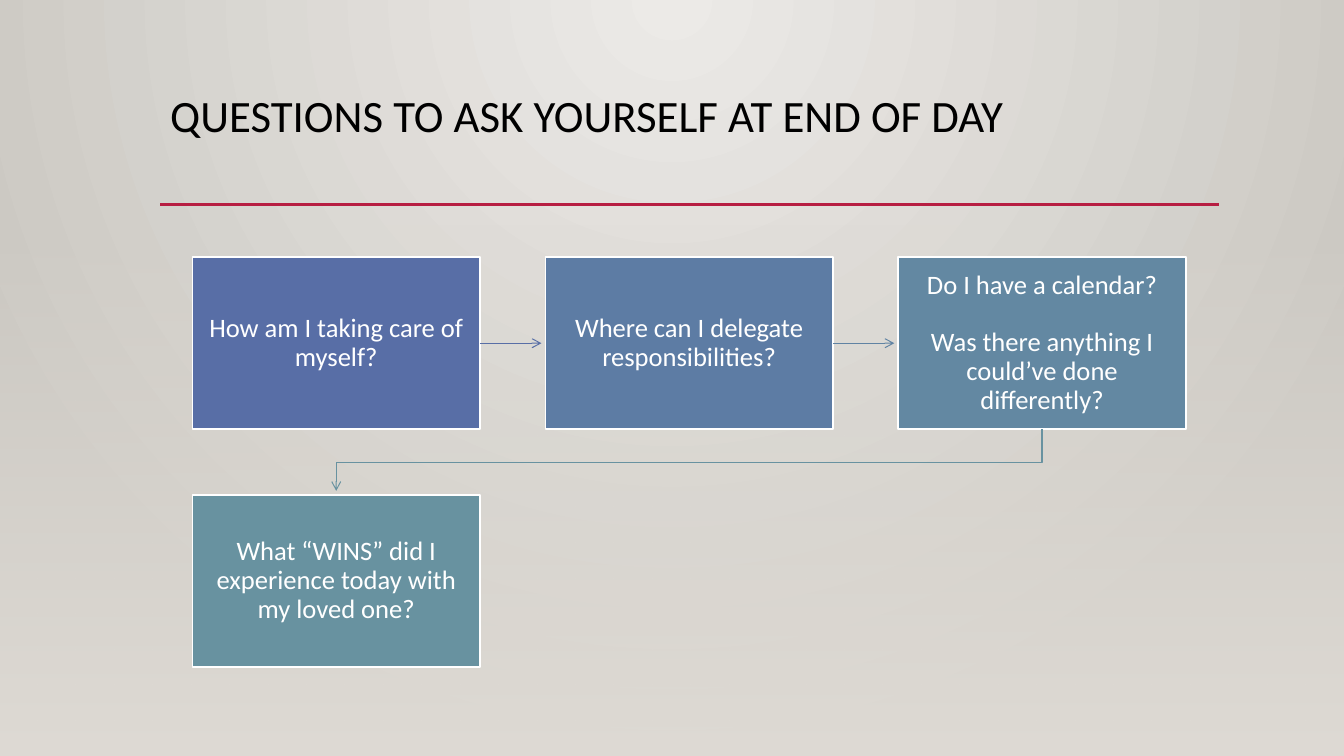
import lxml.etree
import pptx
import pptx.util
import pptx.dml.color
import pptx.enum.shapes
import pptx.enum.text
import pptx.oxml.ns
from dataclasses import dataclass

Inches, Pt = pptx.util.Inches, pptx.util.Pt
qn = pptx.oxml.ns.qn
RGB = pptx.dml.color.RGBColor.from_string
Align = pptx.enum.text.PP_ALIGN
Anchor = pptx.enum.text.MSO_ANCHOR


@dataclass(frozen=True)
class Theme:
    font: str = "Calibri"
    head: int = 32
    body: int = 19
    ink: str = "000000"
    white: str = "FFFFFF"
    rule: str = "B71E42"
    glow: tuple = ("ECEAE7", "CAC7C1")
    floor: str = "DFDBD5"
    steps: tuple = ("586EA6", "5D7CA4", "6388A2", "6892A0")
    links: tuple = ("586EA6", "6083A3", "6892A0")


def assign(item, values):
    for name, value in values.items():
        setattr(item, name, value)


def add_node(parent, tag, values=None):
    return lxml.etree.SubElement(parent, qn(tag), values or {})


class Canvas:
    def __init__(self, slide, theme):
        self.slide, self.theme = slide, theme
        self.shapes = slide.shapes

    def blend(self, fill, colors):
        fill.gradient()
        for stop, color in zip(fill.gradient_stops, colors):
            stop.color.rgb = RGB(color)

    def glow(self):
        """Light the background from the middle of its top edge."""
        self.blend(self.slide.background.fill, self.theme.glow)
        grad = next(self.slide.element.iter(qn("a:gradFill")))
        grad.remove(grad.find(qn("a:lin")))
        round_fill = add_node(grad, "a:path", {"path": "circle"})
        add_node(round_fill, "a:fillToRect",
                 {"l": "43000", "t": "0", "r": "43000", "b": "100000"})

    def rect(self, left, top, width, height):
        box = self.shapes.add_shape(
            pptx.enum.shapes.MSO_SHAPE.RECTANGLE, Inches(left), Inches(top),
            Inches(width), Inches(height))
        box.shadow.inherit = False
        return box

    def floor(self, top, height):
        """Fade the lower part of the slide in from clear to solid."""
        box = self.rect(0, top, 13.33, height)
        box.line.fill.background()
        self.blend(box.fill, [self.theme.floor] * 2)
        box.fill.gradient_angle = 270
        first = next(box.element.iter(qn("a:srgbClr")))
        add_node(first, "a:alpha", {"val": "0"})

    def label(self, shape, lines, size, color, align, frame, gap=0):
        assign(shape.text_frame, {"word_wrap": True, **frame})
        shape.text_frame.text = "\n".join(lines)
        for i, para in enumerate(shape.text_frame.paragraphs):
            assign(para, {"alignment": align, "line_spacing": 0.9,
                          "space_before": Pt(gap if i else 0)})
            font = para.runs[0].font
            assign(font, {"name": self.theme.font, "size": Pt(size)})
            font.color.rgb = RGB(color)

    def title(self, text, left, top, width, height):
        box = self.shapes.add_textbox(Inches(left), Inches(top),
                                      Inches(width), Inches(height))
        self.label(box, [text], self.theme.head, self.theme.ink, Align.LEFT,
                   {"vertical_anchor": Anchor.TOP})

    def step(self, lines, color, left, top, width, height):
        box = self.rect(left, top, width, height)
        box.fill.solid()
        box.fill.fore_color.rgb = RGB(color)
        self.stroke(box, self.theme.white, 1.25)
        side, edge = Inches(0.14), Inches(0.15)
        frame = {"vertical_anchor": Anchor.MIDDLE,
                 "margin_left": side, "margin_right": side,
                 "margin_top": edge, "margin_bottom": edge}
        self.label(box, lines, self.theme.body, self.theme.white,
                   Align.CENTER, frame, gap=20.5)
        return box

    def stroke(self, shape, color, width, arrow=False):
        shape.line.color.rgb = RGB(color)
        shape.line.width = Pt(width)
        if arrow:
            add_node(shape.get_or_add_ln(), "a:tailEnd", {"type": "arrow"})

    def line(self, start, end, color, width, arrow=False, box=None):
        """Draw a straight line, joined to the right side of box if given."""
        link = self.shapes.add_connector(
            pptx.enum.shapes.MSO_CONNECTOR.STRAIGHT,
            *(Inches(value) for value in start + end))
        if box is not None:
            link.begin_connect(box, 3)
        self.stroke(link, color, width, arrow)
        add_node(link.element.spPr, "a:effectLst")

    def bend(self, points, color):
        """Draw an open arrow through the points."""
        first, *rest = [(Inches(x), Inches(y)) for x, y in points]
        draft = self.shapes.build_freeform(*first)
        draft.add_line_segments(rest, close=False)
        link = draft.convert_to_shape()
        link.shadow.inherit = False
        link.fill.background()
        self.stroke(link, color, 0.75, True)


def main():
    deck = pptx.Presentation()
    assign(deck, {"slide_width": Inches(13.33), "slide_height": Inches(7.5)})
    theme = Theme()
    page = Canvas(deck.slides.add_slide(deck.slide_layouts[6]), theme)
    page.glow()
    page.title("QUESTIONS TO ASK YOURSELF AT END OF DAY", 1.59, 0.88, 10.5, 1.15)
    page.line((1.59, 2.03), (12.09, 2.03), theme.rule, 2.5)
    page.floor(2.21, 5.29)

    asks = [
        ["How am I taking care of myself?"],
        ["Where can I delegate responsibilities?"],
        ["Do I have a calendar?",
         "Was there anything I could’ve done differently?"],
        ["What “WINS” did I experience today with my loved one?"],
    ]
    left, top, wide, high = 1.91, 2.55, 2.85, 1.71
    across, down, cols, gap = 3.5, 2.36, 3, 0.04
    boxes = []
    for i, (lines, color) in enumerate(zip(asks, theme.steps)):
        row, col = divmod(i, cols)
        boxes.append(page.step(lines, color, left + col * across,
                               top + row * down, wide, high))

    level = top + high / 2
    for i in range(cols - 1):
        start = left + i * across
        page.line((start + wide, level), (start + across - gap, level),
                  theme.links[i], 0.75, True, boxes[i])

    near = left + wide / 2
    far = near + (cols - 1) * across
    base, turn = top + high, 4.59
    page.bend([(far, base), (far, turn), (near, turn),
               (near, top + down - gap)], theme.links[-1])
    deck.save("out.pptx")


if __name__ == "__main__":
    main()
